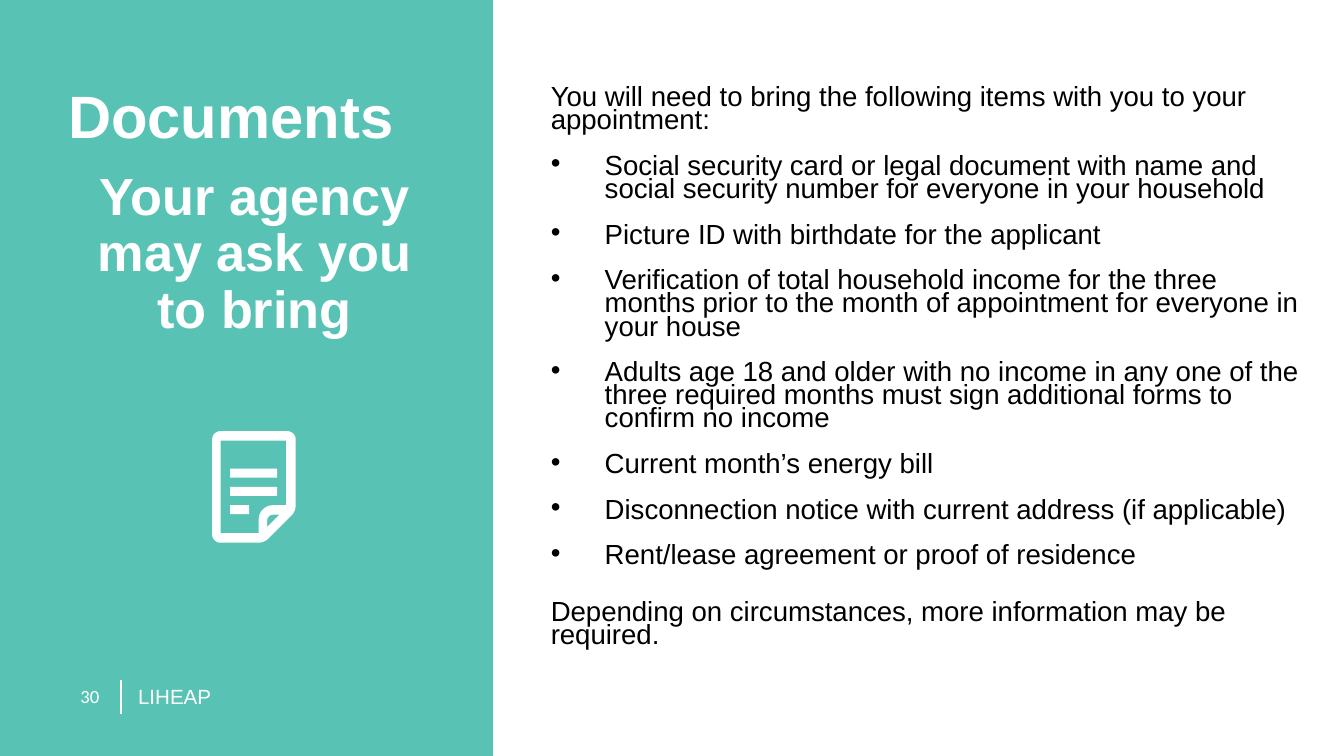
import math

import pptx
import pptx.dml.color
import pptx.enum.shapes
import pptx.enum.text
import pptx.oxml.ns
import pptx.util
from lxml import etree

Cm = pptx.util.Cm
Pt = pptx.util.Pt
qn = pptx.oxml.ns.qn
Align = pptx.enum.text.PP_ALIGN
Anchor = pptx.enum.text.MSO_ANCHOR
Shape = pptx.enum.shapes.MSO_SHAPE


def color(code):
    return pptx.dml.color.RGBColor.from_string(code)


def arc(x, y, r, start, end):
    turns = [math.radians(start + (end - start) * i / 8) for i in range(9)]
    return [(x + r * math.cos(t), y + r * math.sin(t)) for t in turns]


class Deck:
    white, black, teal = "FFFFFF", "000000", "58C3B4"
    face = "Arial"

    def __init__(self, width, height):
        self.file = pptx.Presentation()
        self.file.slide_width = Cm(width)
        self.file.slide_height = Cm(height)
        self.slide = self.file.slides.add_slide(self.file.slide_layouts[6])
        fill = self.slide.background.fill
        fill.solid()
        fill.fore_color.rgb = color(self.teal)
        self.shapes = self.slide.shapes

    def paint(self, shape):
        shape.shadow.inherit = False
        shape.fill.solid()
        shape.fill.fore_color.rgb = color(self.white)
        shape.line.fill.background()

    def rect(self, x, y, w, h, home=None):
        home = home or self.shapes
        self.paint(home.add_shape(Shape.RECTANGLE, Cm(x), Cm(y), Cm(w), Cm(h)))

    def outline(self, paths, home):
        paths = [[(Cm(x), Cm(y)) for x, y in path] for path in paths]
        pen = home.build_freeform(*paths[0][0], scale=1.0)
        for path in paths:
            if path is not paths[0]:
                pen.move_to(*path[0])
            pen.add_line_segments(path[1:], close=True)
        self.paint(pen.convert_to_shape())

    def rule(self, x, top, end):
        kind = pptx.enum.shapes.MSO_CONNECTOR.STRAIGHT
        line = self.shapes.add_connector(kind, Cm(x), Cm(top), Cm(x), Cm(end))
        line.line.color.rgb = color(self.white)
        line.line.width = Pt(0.75)
        etree.SubElement(line._element.spPr, qn("a:effectLst"))

    def box(self, x, y, w, h, anchor=Anchor.TOP, inset=True):
        frame = self.shapes.add_textbox(Cm(x), Cm(y), Cm(w), Cm(h)).text_frame
        frame.word_wrap = True
        frame.vertical_anchor = anchor
        if not inset:
            frame.margin_left = frame.margin_right = 0
            frame.margin_top = frame.margin_bottom = 0
        return frame

    def bullet(self, para):
        props = para._p.get_or_add_pPr()
        props.set("marL", str(Cm(1.02)))
        props.set("indent", str(-Cm(1.02)))
        etree.SubElement(props, qn("a:buFont"), typeface=self.face)
        etree.SubElement(props, qn("a:buChar"), char="•")

    def text(self, frame, words, size, ink=white, face=face, bold=False,
             align=Align.LEFT, gap=0, lead=0.9, bullet=False):
        first = not frame.paragraphs[0].runs
        para = frame.paragraphs[0] if first else frame.add_paragraph()
        para.add_run().text = words
        if bullet:
            self.bullet(para)
        para.alignment = align
        para.line_spacing = lead
        if not first:
            para.space_before = Pt(gap)
        font = para.font
        font.name, font.size, font.bold = face, Pt(size), bold
        font.color.rgb = color(ink)

    def icon(self):
        home = self.shapes.add_group_shape().shapes
        sheet = (arc(4.17, 8.31, 0.16, 180, 270)
                 + arc(5.43, 8.31, 0.16, 270, 360)
                 + arc(5.31, 9.55, 0.28, 0, 45)
                 + arc(4.88, 9.98, 0.28, 45, 90)
                 + arc(4.17, 10.1, 0.16, 90, 180))
        inside = [(4.17, 10.08), (4.17, 8.33), (5.41, 8.33), (5.41, 9.55)]
        inside += arc(5.16, 9.82, 0.27, 270, 180) + [(4.89, 10.08)]
        fold = [(5.05, 9.96)] + arc(5.16, 9.84, 0.11, 180, 270)
        fold += [(5.28, 9.73)]
        self.outline([sheet, inside, fold], home)
        for row, width in enumerate((0.89, 0.89, 0.36)):
            self.rect(4.35, 8.86 + 0.345 * row, width, 0.17, home)


def main():
    deck = Deck(25.4, 14.29)
    deck.rect(9.32, 0, 16.08, 14.29)

    page = deck.box(1.27, 12.83, 1.07, 0.69)
    deck.text(page, "30", 10, face="Calibri", lead=1.0)
    deck.rule(2.29, 12.85, 13.49)
    name = deck.box(2.36, 12.85, 8.79, 0.64)
    deck.text(name, "LIHEAP", 11)

    title = deck.box(1.04, 1.52, 7.54, 4.88)
    deck.text(title, "Documents", 32, bold=True)
    deck.text(title, "Your agency may ask you to bring", 28, bold=True,
              align=Align.CENTER, gap=10)

    items = (
        "Social security card or legal document with name and social "
        "security number for everyone in your household",
        "Picture ID with birthdate for the applicant",
        "Verification of total household income for the three months prior "
        "to the month of appointment for everyone in your house",
        "Adults age 18 and older with no income in any one of the three "
        "required months must sign additional forms to confirm no income",
        "Current month’s energy bill",
        "Disconnection notice with current address (if applicable)",
        "Rent/lease agreement or proof of residence",
    )
    body = deck.box(10.41, 1.52, 14.17, 10.9, Anchor.MIDDLE, inset=False)
    style = {"size": 14.8, "ink": deck.black, "lead": 0.7}
    deck.text(body, "You will need to bring the following items with you to "
              "your appointment:", **style)
    for item in items:
        deck.text(body, item, gap=12, bullet=True, **style)
    deck.text(body, "Depending on circumstances, more information may be "
              "required.", gap=18, **style)

    deck.icon()
    deck.file.save("out.pptx")


if __name__ == "__main__":
    main()
